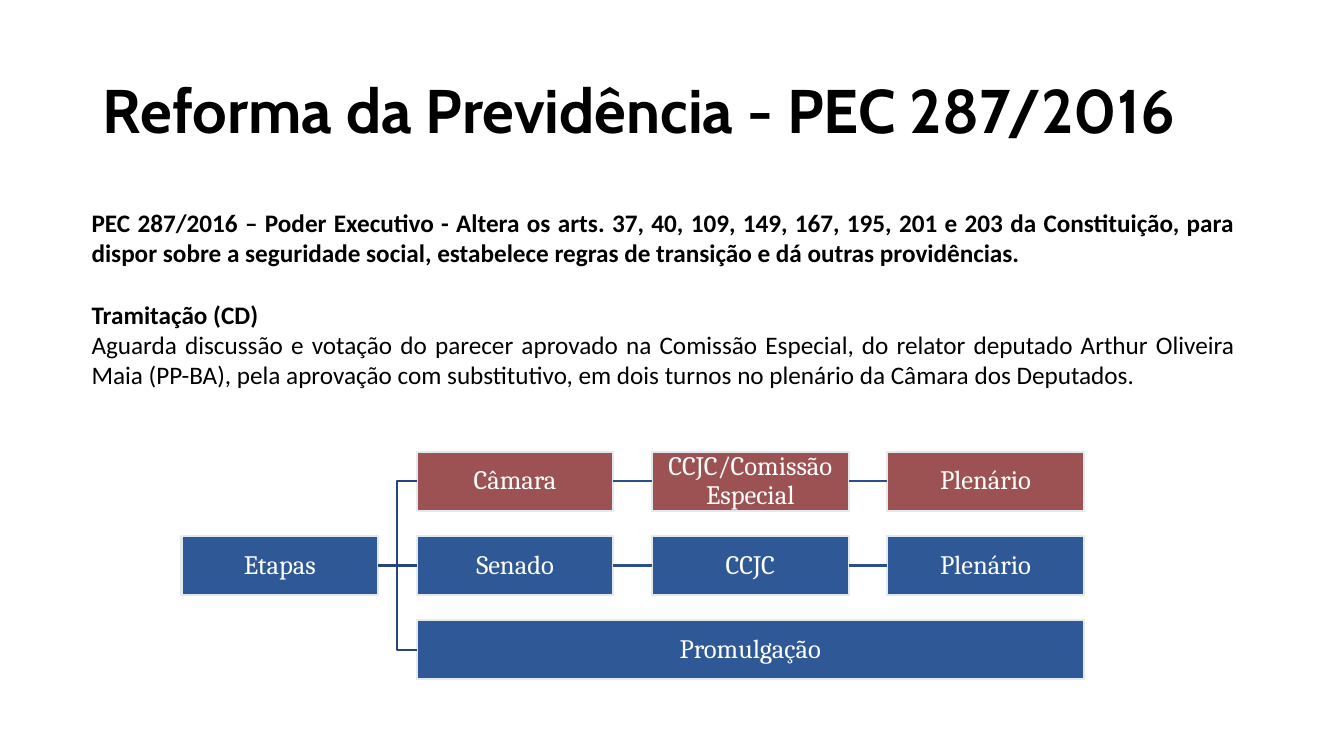
from pptx import Presentation
from pptx.dml.color import RGBColor
from pptx.enum.shapes import MSO_CONNECTOR as Link, MSO_SHAPE as Preset
from pptx.enum.text import MSO_ANCHOR as Anchor, PP_ALIGN as Align
from pptx.oxml.xmlchemy import OxmlElement
from pptx.util import Inches, Pt

BLUE, RED = "2F5897", "9C5252"
LEFT_SITE, RIGHT_SITE = 1, 3


def color(value):
    return RGBColor.from_string(value)


def style_font(paragraph, name, size, value, bold=False):
    font = paragraph.font
    font.name, font.size, font.bold = name, Pt(size), bold
    font.color.rgb = color(value)


def place_heading(slide, left, top, width, height):
    heading = slide.shapes.title
    heading.left, heading.top = Inches(left), Inches(top)
    heading.width, heading.height = Inches(width), Inches(height)
    heading.text_frame.text = "Reforma da Previdência - PEC 287/2016"
    heading.text_frame.vertical_anchor = Anchor.MIDDLE
    line = heading.text_frame.paragraphs[0]
    line.alignment, line.line_spacing = Align.LEFT, 0.9
    style_font(line, "Cabin", 44, "000000", bold=True)


def place_summary(slide, left, top, width, height):
    summary = slide.shapes.add_textbox(
        Inches(left), Inches(top), Inches(width), Inches(height)).text_frame
    summary.word_wrap = True
    passages = [
        ("PEC 287/2016 – Poder Executivo - Altera os arts. 37, 40, 109, 149, 167, 195, 201 e 203 "
         "da Constituição, para dispor sobre a seguridade social, estabelece regras de transição "
         "e dá outras providências.", True, Align.JUSTIFY, 22),
        ("Tramitação (CD)", True, Align.LEFT, 0),
        ("Aguarda discussão e votação do parecer aprovado na Comissão Especial, do relator "
         "deputado Arthur Oliveira Maia (PP-BA), pela aprovação com substitutivo, em dois turnos "
         "no plenário da Câmara dos Deputados.", False, Align.JUSTIFY, 0),
    ]
    for index, (text, bold, alignment, space_after) in enumerate(passages):
        passage = summary.add_paragraph() if index else summary.paragraphs[0]
        passage.text, passage.alignment = text, alignment
        passage.space_after = Pt(space_after)
        style_font(passage, "Calibri", 18, "000000", bold)


def add_stage(slide, text, left, top, width, height, fill):
    stage = slide.shapes.add_shape(
        Preset.RECTANGLE, Inches(left), Inches(top), Inches(width), Inches(height))
    stage.shadow.inherit = False
    stage.fill.solid()
    stage.fill.fore_color.rgb = color(fill)
    stage.line.color.rgb = color("E4E9EF")
    stage.line.width = Pt(1.5)
    frame = stage.text_frame
    frame.word_wrap, frame.vertical_anchor = True, Anchor.MIDDLE
    frame.margin_left = frame.margin_right = Inches(0.01)
    frame.margin_top = frame.margin_bottom = Inches(0.01)
    frame.text = text
    label = frame.paragraphs[0]
    label.alignment, label.line_spacing = Align.CENTER, 0.9
    style_font(label, "Cambria", 19, "FFFFFF")
    return stage


def link_stages(slide, source, target, stroke):
    route = Link.STRAIGHT if source.top == target.top else Link.ELBOW
    link = slide.shapes.add_connector(route, 0, 0, 0, 0)
    link.begin_connect(source, RIGHT_SITE)
    link.end_connect(target, LEFT_SITE)
    link.line.color.rgb = color(stroke)
    link.line.width = Pt(1.5)
    link._element.spPr.append(OxmlElement("a:effectLst"))


def place_stages(slide, left, top, width, height):
    stage_width, stage_height = 1.95, 0.59
    column_step = (width - stage_width) / 3
    row_step = (height - stage_height) / 2
    root = add_stage(slide, "Etapas", left, top + row_step, stage_width, stage_height, BLUE)
    branches = [
        (["Câmara", "CCJC/Comissão Especial", "Plenário"], RED, stage_width),
        (["Senado", "CCJC", "Plenário"], BLUE, stage_width),
        (["Promulgação"], BLUE, width - column_step),
    ]
    for row, (names, fill, branch_width) in enumerate(branches):
        previous = root
        for column, name in enumerate(names, start=1):
            stage = add_stage(slide, name, left + column * column_step, top + row * row_step,
                              branch_width, stage_height, fill)
            link_stages(slide, previous, stage, "264679" if previous is root else "2B5089")
            previous = stage


def main():
    deck = Presentation()
    deck.slide_width, deck.slide_height = Inches(13.33), Inches(7.5)
    slide = deck.slides.add_slide(deck.slide_layouts[5])
    place_heading(slide, 0.92, 0.4, 11.5, 1.45)
    place_stages(slide, 1.8, 4.48, 8.95, 2.26)
    place_summary(slide, 0.81, 2.01, 11.54, 1.92)
    deck.save("out.pptx")


if __name__ == "__main__":
    main()
